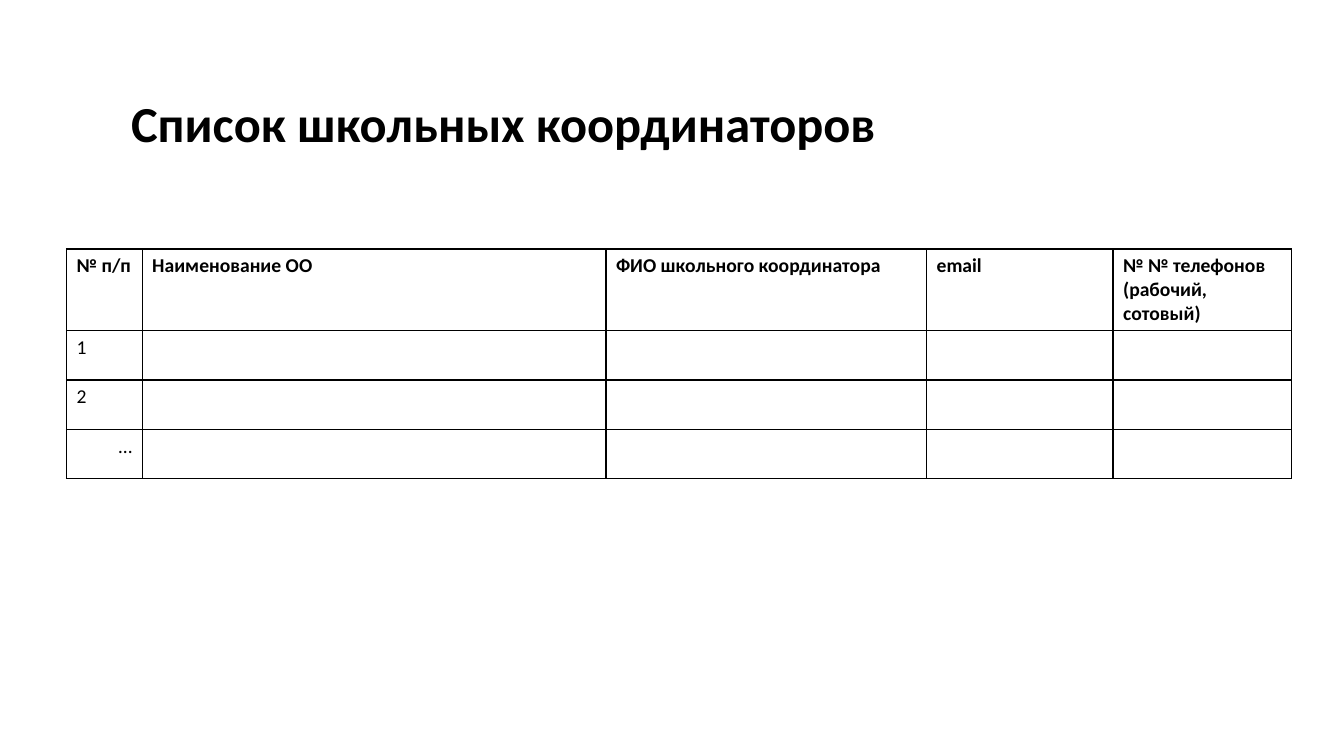
"""Builds the slide with the table of school coordinators."""
from lxml import etree
from pptx import Presentation
from pptx.dml.color import RGBColor
from pptx.enum import text
from pptx.oxml import ns
from pptx.util import Inches, Pt

TITLE = "Список школьных координаторов"
COLUMNS = [
    ("№ п/п", 0.75),
    ("Наименование ОО", 4.6),
    ("ФИО школьного координатора", 3.18),
    ("email", 1.85),
    ("№ № телефонов (рабочий, сотовый)", 1.77),
]
ROW_LABELS = ["1", "2", "…"]
HEADER_HEIGHT, ROW_HEIGHT = 0.8, 0.49
BLACK = RGBColor(0, 0, 0)
FONT = "Calibri"


def style_font(font, size, bold):
    font.name = FONT
    font.size = Pt(size)
    font.bold = bold
    font.color.rgb = BLACK


def add_borders(cell):
    properties = cell._tc.get_or_add_tcPr()
    for position, side in enumerate(("lnL", "lnR", "lnT", "lnB")):
        line = etree.Element(ns.qn(f"a:{side}"), w=str(Pt(1)))
        fill = etree.SubElement(line, ns.qn("a:solidFill"))
        etree.SubElement(fill, ns.qn("a:srgbClr"), val=str(BLACK))
        properties.insert(position, line)


def add_title(page):
    title = page.shapes.title
    title.left, title.top = Inches(1.2), Inches(0.86)
    title.width, title.height = Inches(7.67), Inches(0.71)
    frame = title.text_frame
    frame.text = TITLE
    frame.word_wrap = True
    frame.auto_size = text.MSO_AUTO_SIZE.NONE
    frame.vertical_anchor = text.MSO_ANCHOR.TOP
    para = frame.paragraphs[0]
    para.alignment = text.PP_ALIGN.LEFT
    style_font(para.runs[0].font, 36, True)


def add_coordinators(page):
    headings = [heading for heading, width in COLUMNS]
    widths = [width for heading, width in COLUMNS]
    blanks = [""] * (len(COLUMNS) - 1)
    rows = [headings] + [[label] + blanks for label in ROW_LABELS]
    heights = [HEADER_HEIGHT] + [ROW_HEIGHT] * len(ROW_LABELS)
    table = page.shapes.add_table(
        len(rows), len(COLUMNS), Inches(0.66), Inches(2.47),
        Inches(sum(widths)), Inches(sum(heights))).table
    table.horz_banding = False
    for column, width in zip(table.columns, widths):
        column.width = Inches(width)
    for index, (row, height) in enumerate(zip(rows, heights)):
        table.rows[index].height = Inches(height)
        for cell, label in zip(table.rows[index].cells, row):
            cell.fill.background()
            add_borders(cell)
            para = cell.text_frame.paragraphs[0]
            para.text = label
            style_font(para.font, 14, index == 0)
            for span in para.runs:
                style_font(span.font, 14, index == 0)
            if label == "…":
                para.alignment = text.PP_ALIGN.RIGHT


def main():
    deck = Presentation()
    deck.slide_width, deck.slide_height = Inches(13.33), Inches(7.5)
    page = deck.slides.add_slide(deck.slide_layouts[5])
    add_title(page)
    add_coordinators(page)
    deck.save("out.pptx")


if __name__ == "__main__":
    main()
